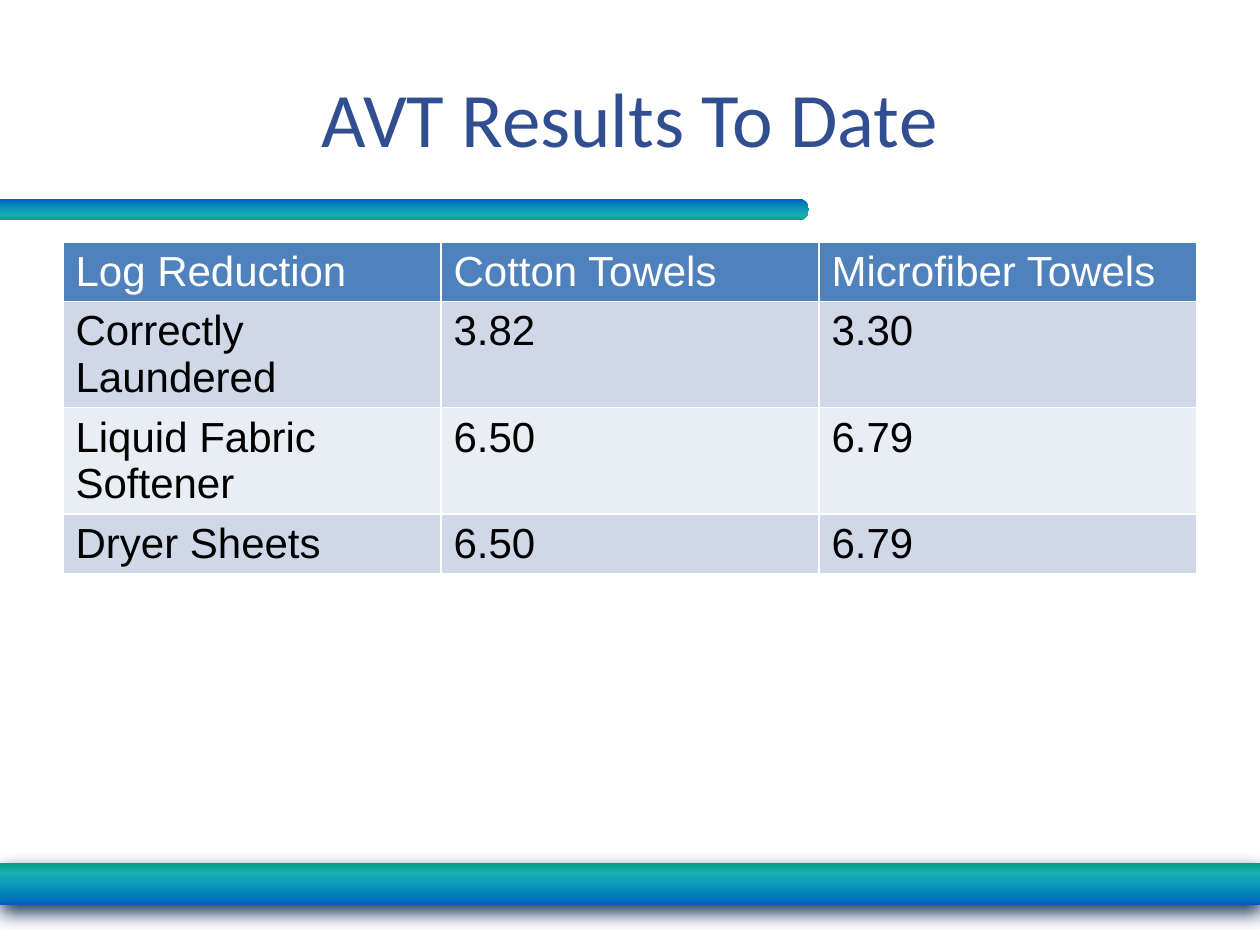
from lxml import etree
from pptx import Presentation, util as u
from pptx.dml.color import RGBColor
from pptx.enum import shapes, text
from pptx.oxml.ns import qn

TITLE_BLUE = RGBColor(0x31, 0x4E, 0x90)
HEADER_BLUE = RGBColor(0x4F, 0x81, 0xBD)
BANDS = [RGBColor(0xD0, 0xD8, 0xE8), RGBColor(0xE9, 0xED, 0xF4)]
WHITE = RGBColor(0xFF, 0xFF, 0xFF)
BLACK = RGBColor(0, 0, 0)
SHADOW_NAVY = RGBColor(0x17, 0x37, 0x5E)
SEA_STOPS = [
    (0, RGBColor(0x02, 0xA0, 0x7E)),
    (25, RGBColor(0x19, 0xAF, 0xB7)),
    (75, RGBColor(0x00, 0x83, 0xB9)),
    (100, RGBColor(0x00, 0x5C, 0xBF)),
]

prs = Presentation()
prs.slide_width, prs.slide_height = u.Inches(10), u.Inches(7.5)
slide = prs.slides.add_slide(prs.slide_layouts[5])
margin = u.Inches(0.5)
content_width = prs.slide_width - 2 * margin


def add_bar(preset, left, top, width, height, angle):
    """Add a borderless bar with the sea gradient; angle runs counter-clockwise."""
    bar = slide.shapes.add_shape(preset, *map(u.Inches, (left, top, width, height)))
    bar.shadow.inherit = False
    bar.line.fill.background()
    bar.fill.gradient()
    bar.fill.gradient_angle = angle
    stops = bar.fill._fill._gradFill.find(qn("a:gsLst"))
    for stop in list(stops):
        stops.remove(stop)
    for percent, color in SEA_STOPS:
        stop = etree.SubElement(stops, qn("a:gs"), pos=str(percent * 1000))
        etree.SubElement(stop, qn("a:srgbClr"), val=str(color))
    return bar


# Footer bar with its shadow, and the rule under the title
footer = add_bar(shapes.MSO_SHAPE.RECTANGLE, 0, 6.85, 10, 0.33, 270)
effects = footer._element.spPr.find(qn("a:effectLst"))
shadow = etree.SubElement(effects, qn("a:outerShdw"), blurRad=str(u.Pt(10)),
                          dist=str(u.Pt(4)), dir="5400000", rotWithShape="0")
etree.SubElement(shadow, qn("a:srgbClr"), val=str(SHADOW_NAVY))

title_rule = add_bar(shapes.MSO_SHAPE.ROUNDED_RECTANGLE, -0.08, 1.58, 6.5, 0.17, 90)
title_rule.adjustments[0] = 0.5

# Title
title = slide.shapes.title
title.left, title.top = margin, u.Inches(0.3)
title.width, title.height = content_width, u.Inches(1.25)
title.text_frame.vertical_anchor = text.MSO_ANCHOR.MIDDLE
heading = title.text_frame.paragraphs[0]
heading.alignment = text.PP_ALIGN.CENTER
run = heading.add_run()
run.text = "AVT Results To Date"
run.font.name, run.font.size = "Calibri", u.Pt(44)
run.font.color.rgb = TITLE_BLUE

# Results table
results = [
    ("Log Reduction", "Cotton Towels", "Microfiber Towels"),
    ("Correctly Laundered", "3.82", "3.30"),
    ("Liquid Fabric Softener", "6.50", "6.79"),
    ("Dryer Sheets", "6.50", "6.79"),
]
table = slide.shapes.add_table(len(results), len(results[0]), margin, u.Inches(1.92),
                               content_width, u.Inches(1.62)).table
for r, record in enumerate(results):
    for c, value in enumerate(record):
        cell = table.cell(r, c)
        cell.fill.solid()
        cell.fill.fore_color.rgb = BANDS[(r - 1) % 2] if r else HEADER_BLUE
        run = cell.text_frame.paragraphs[0].add_run()
        run.text = value
        run.font.name, run.font.size, run.font.bold = "Arial", u.Pt(24), False
        run.font.color.rgb = BLACK if r else WHITE

prs.save("out.pptx")
